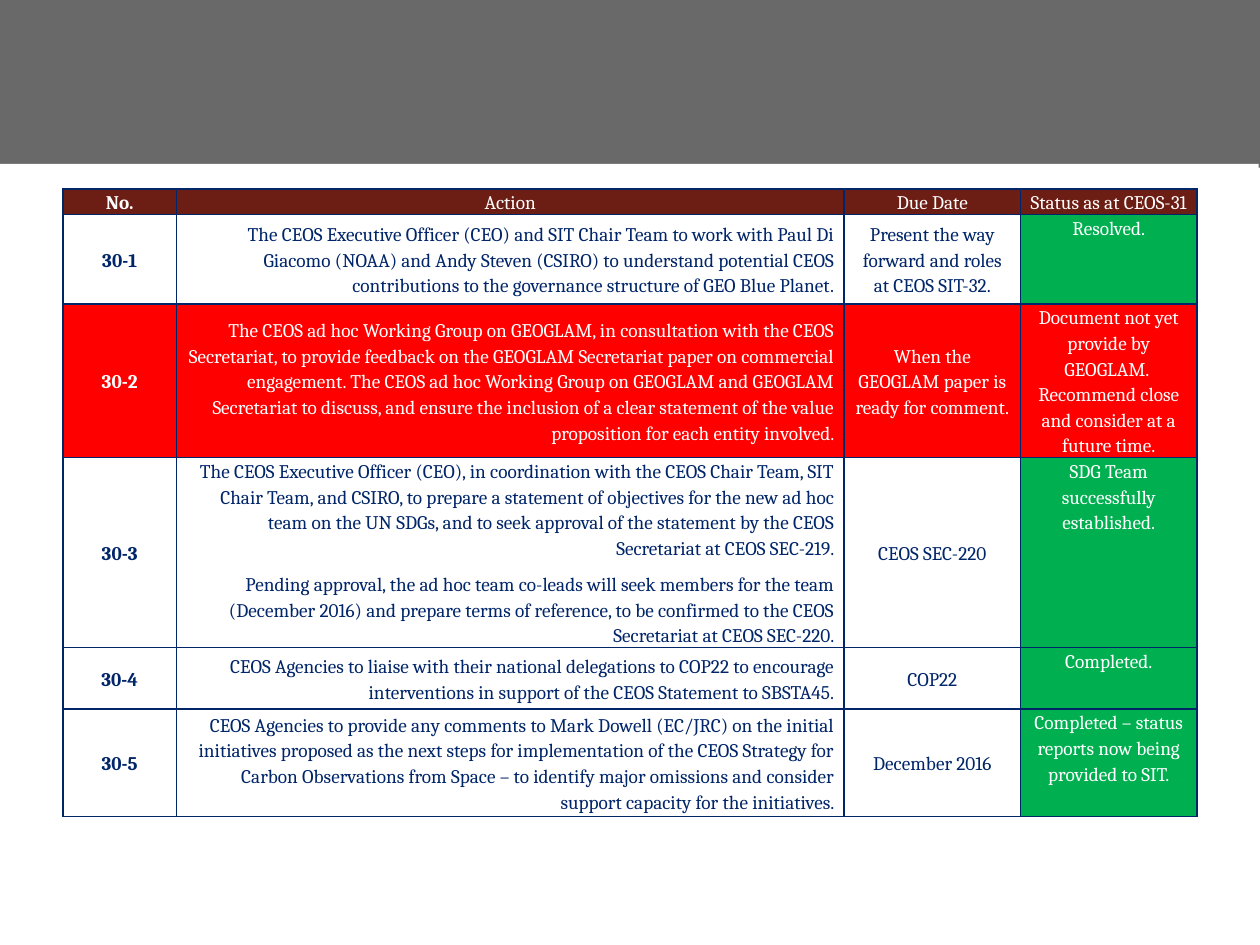
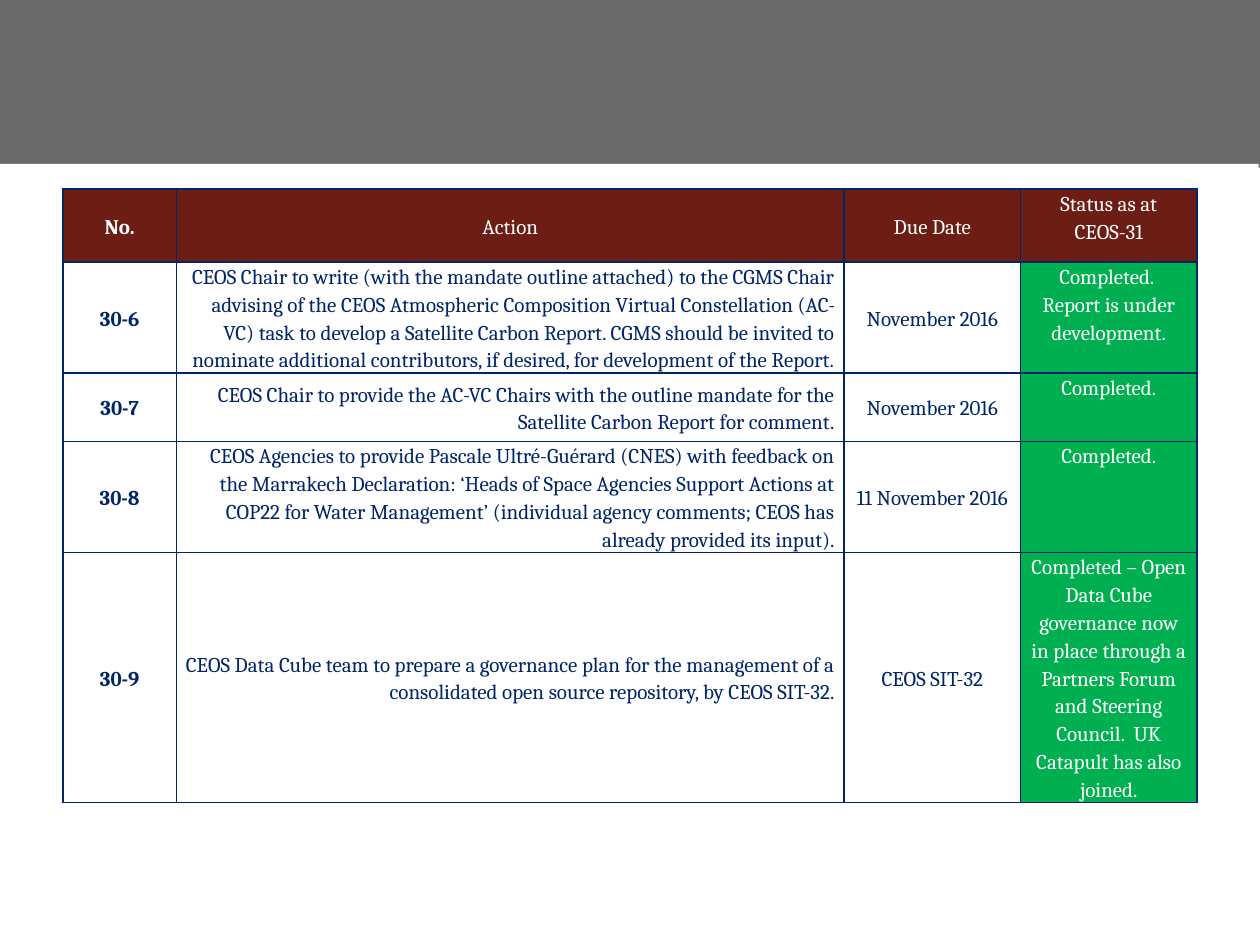
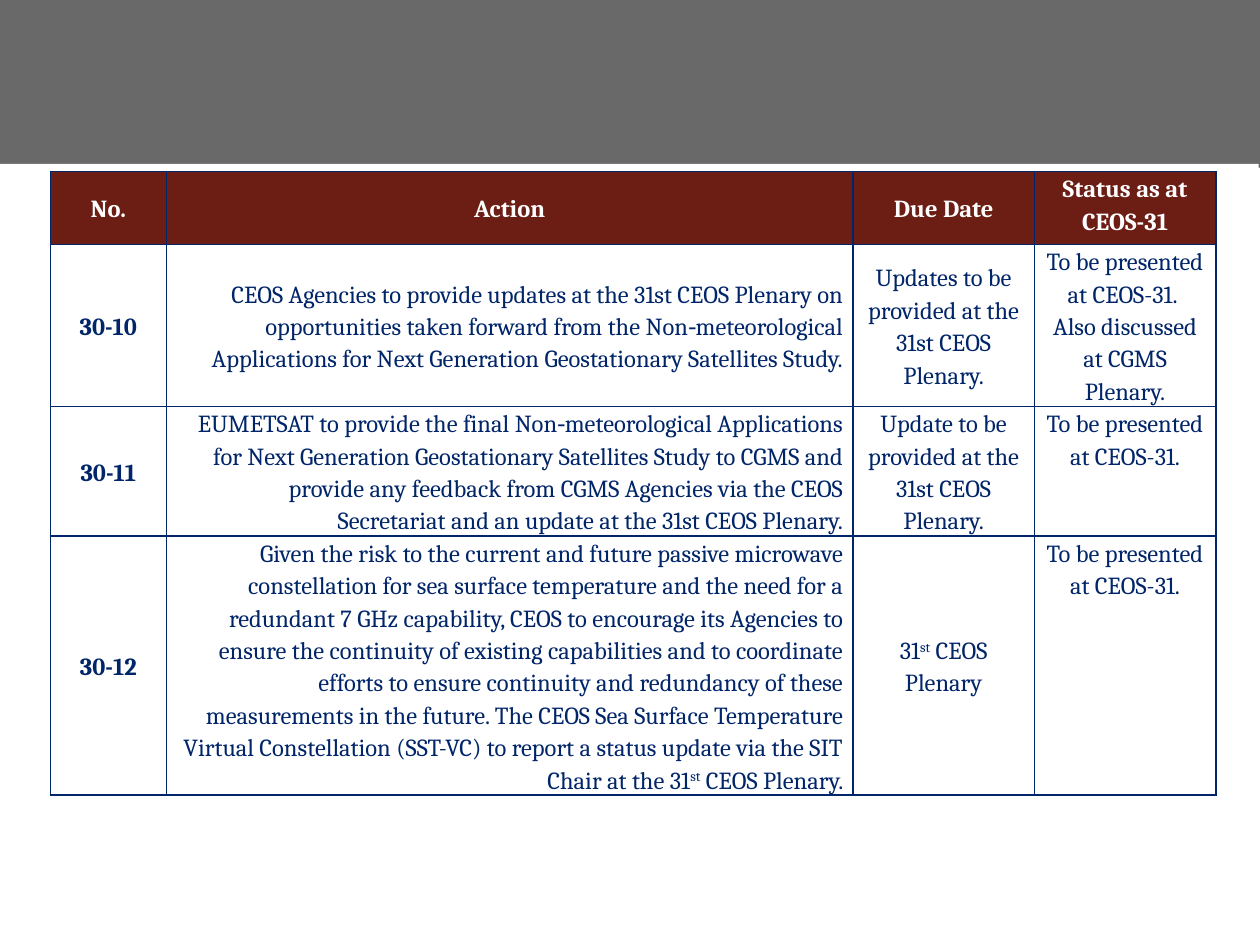
from lxml.etree import SubElement
from pptx import Presentation
from pptx.dml.color import RGBColor
from pptx.enum.shapes import MSO_SHAPE as Kind
from pptx.enum.text import MSO_ANCHOR as Anchor, PP_ALIGN as Align
from pptx.oxml.ns import qn
from pptx.util import Inches, Pt

HUES = {"grey": "696969", "white": "FFFFFF", "navy": "002569",
        "maroon": "6C1E15", "green": "00B050", "red": "FF0000"}
FACE = "Cambria"
PANELS = [(-0.01, 1.3, 10, 6.2), (0, 1.33, 10, 6.17)]
HEADS = ("No.", "Action", "Due Date", "Status as at CEOS-31")
ALIGNS = (Align.CENTER, Align.RIGHT, Align.CENTER, Align.CENTER)
# Cell insets in points
INSETS = {"margin_left": 5.4, "margin_right": 5.4,
          "margin_top": 0, "margin_bottom": 0}

# Fill of the first three cells, then fill of the status cell
STATES = {"head": ("maroon", "maroon"), "done": (None, "green"),
          "stuck": ("red", "red"), "open": (None, None)}

# Each row: state, height, number, action, due date, status.
# A line break starts a paragraph; ^ marks bound raised text.
SLIDES = [
    {"at": (0.5, 1.5, 9, 5.45), "cols": (0.9, 5.3, 1.4, 1.4),
     "size": 11, "bold": False, "top": 0.19, "rows": [
        ("done", 0.71, "30-1",
         "The CEOS Executive Officer (CEO) and SIT Chair Team to work with "
         "Paul Di Giacomo (NOAA) and Andy Steven (CSIRO) to understand "
         "potential CEOS contributions to the governance structure of GEO "
         "Blue Planet.",
         "Present the way forward and roles at CEOS SIT-32.",
         "Resolved."),
        ("stuck", 1.15, "30-2",
         "The CEOS ad hoc Working Group on GEOGLAM, in consultation with the "
         "CEOS Secretariat, to provide feedback on the GEOGLAM Secretariat "
         "paper on commercial engagement. The CEOS ad hoc Working Group on "
         "GEOGLAM and GEOGLAM Secretariat to discuss, and ensure the "
         "inclusion of a clear statement of the value proposition for each "
         "entity involved.",
         "When the GEOGLAM paper is ready for comment.",
         "Document not yet provide by GEOGLAM.  Recommend close and consider "
         "at a future time."),
        ("done", 1.35, "30-3",
         "The CEOS Executive Officer (CEO), in coordination with the CEOS "
         "Chair Team, SIT Chair Team, and CSIRO, to prepare a statement of "
         "objectives for the new ad hoc team on the UN SDGs, and to seek "
         "approval of the statement by the CEOS Secretariat at CEOS "
         "SEC-219.\n"
         "Pending approval, the ad hoc team co-leads will seek members for "
         "the team (December 2016) and prepare terms of reference, to be "
         "confirmed to the CEOS Secretariat at CEOS SEC-220.",
         "CEOS SEC-220",
         "SDG Team successfully established."),
        ("done", 0.49, "30-4",
         "CEOS Agencies to liaise with their national delegations to COP22 "
         "to encourage interventions in support of the CEOS Statement to "
         "SBSTA45.",
         "COP22",
         "Completed."),
        ("done", 0.85, "30-5",
         "CEOS Agencies to provide any comments to Mark Dowell (EC/JRC) on "
         "the initial initiatives proposed as the next steps for "
         "implementation of the CEOS Strategy for Carbon Observations from "
         "Space – to identify major omissions and consider support capacity "
         "for the initiatives.",
         "December 2016",
         "Completed – status reports now being provided to SIT."),
     ]},
    {"at": (0.5, 1.5, 9, 5.43), "cols": (0.9, 5.3, 1.4, 1.4),
     "size": 12, "bold": False, "top": 0.58, "rows": [
        ("done", 0.86, "30-6",
         "CEOS Chair to write (with the mandate outline attached) to the "
         "CGMS Chair advising of the CEOS Atmospheric Composition Virtual "
         "Constellation (AC-VC) task to develop a Satellite Carbon Report. "
         "CGMS should be invited to nominate additional contributors, if "
         "desired, for development of the Report.",
         "November 2016",
         "Completed.  Report is under development."),
        ("done", 0.54, "30-7",
         "CEOS Chair to provide the AC-VC Chairs with the outline mandate "
         "for the Satellite Carbon Report for comment.",
         "November 2016",
         "Completed."),
        ("done", 0.81, "30-8",
         "CEOS Agencies to provide Pascale Ultré-Guérard (CNES) with "
         "feedback on the Marrakech Declaration: ‘Heads of Space Agencies "
         "Support Actions at COP22 for Water Management’ (individual agency "
         "comments; CEOS has already provided its input).",
         "11 November 2016",
         "Completed."),
        ("done", 1.53, "30-9",
         "CEOS Data Cube team to prepare a governance plan for the "
         "management of a consolidated open source repository, by CEOS "
         "SIT-32.",
         "CEOS SIT-32",
         "Completed – Open Data Cube governance now in place through a "
         "Partners Forum and Steering Council.  UK Catapult has also "
         "joined."),
     ]},
    {"at": (0.4, 1.36, 9.25, 5.95), "cols": (0.92, 5.45, 1.44, 1.44),
     "size": 14, "bold": True, "top": 0.58, "rows": [
        ("open", 0.77, "30-10",
         "CEOS Agencies to provide updates at the 31st CEOS Plenary on "
         "opportunities taken forward from the Non‐meteorological "
         "Applications for Next Generation Geostationary Satellites Study.",
         "Updates to be provided at the 31st CEOS Plenary.",
         "To be presented at CEOS-31.  Also discussed at CGMS Plenary."),
        ("open", 0.87, "30-11",
         "EUMETSAT to provide the final Non‐meteorological Applications for "
         "Next Generation Geostationary Satellites Study to CGMS and provide "
         "any feedback from CGMS Agencies via the CEOS Secretariat and an "
         "update at the 31st CEOS Plenary.",
         "Update to be provided at the 31st CEOS Plenary.",
         "To be presented at CEOS-31."),
        ("open", 1.37, "30-12",
         "Given the risk to the current and future passive microwave "
         "constellation for sea surface temperature and the need for a "
         "redundant 7 GHz capability, CEOS to encourage its Agencies to "
         "ensure the continuity of existing capabilities and to coordinate "
         "efforts to ensure continuity and redundancy of these measurements "
         "in the future. The CEOS Sea Surface Temperature Virtual "
         "Constellation (SST-VC) to report a status update via the SIT Chair "
         "at the 31^st^ CEOS Plenary.",
         "31^st^ CEOS Plenary",
         "To be presented at CEOS-31."),
     ]},
]


def rgb(hue):
    return RGBColor.from_string(HUES[hue])


def paint(fill, hue):
    fill.solid()
    fill.fore_color.rgb = rgb(hue)


def add_panels(slide):
    for box in PANELS:
        panel = slide.shapes.add_shape(Kind.RECTANGLE, *map(Inches, box))
        panel.shadow.inherit = False
        paint(panel.fill, "white")
        panel.line.fill.background()


def add_edges(cell):
    props = cell._tc.get_or_add_tcPr()
    for side in "LRTB":
        line = SubElement(props, qn(f"a:ln{side}"), w=str(Pt(1)))
        fill = SubElement(line, qn("a:solidFill"))
        SubElement(fill, qn("a:srgbClr"), val=HUES["navy"])


def write(cell, text, align, ink, look):
    frame = cell.text_frame
    for i, part in enumerate(text.split("\n")):
        para = frame.add_paragraph() if i else frame.paragraphs[0]
        para.alignment = align
        para.line_spacing = 1.15
        para.space_before = Pt(6 if i else 0)
        for j, piece in enumerate(part.split("^")):
            run = para.add_run()
            run.text = piece
            for key, value in look.items():
                setattr(run.font, key, value)
            run.font.color.rgb = rgb(ink)
            if j % 2:
                run._r.get_or_add_rPr().set("baseline", "30000")


def add_log(slide, log):
    rows = [("head", log["top"], *HEADS)] + log["rows"]
    frame = slide.shapes.add_table(len(rows), len(HEADS),
                                   *map(Inches, log["at"]))
    table = frame.table
    table.first_row = table.horz_banding = False
    for col, width in zip(table.columns, log["cols"]):
        col.width = Inches(width)
    for r, (state, height, *texts) in enumerate(rows):
        table.rows[r].height = Inches(height)
        main, last = STATES[state]
        head = state == "head"
        for c, text in enumerate(texts):
            cell = table.cell(r, c)
            status = c == len(HEADS) - 1
            for side, inset in INSETS.items():
                setattr(cell, side, Pt(inset))
            cell.vertical_anchor = Anchor.TOP if status else Anchor.MIDDLE
            add_edges(cell)
            hue = last if status else main
            if hue:
                paint(cell.fill, hue)
            else:
                cell.fill.background()
            write(cell, text, Align.CENTER if head else ALIGNS[c],
                  "white" if hue else "navy",
                  {"name": FACE, "size": Pt(log["size"]),
                   "bold": c == 0 or (head and log["bold"])})
    frame.height = Inches(log["at"][3])


def main():
    deck = Presentation()
    deck.slide_width, deck.slide_height = Inches(10), Inches(7.5)
    paint(deck.slide_master.background.fill, "grey")
    for log in SLIDES:
        slide = deck.slides.add_slide(deck.slide_layouts[6])
        add_panels(slide)
        add_log(slide, log)
    deck.save("out.pptx")


if __name__ == "__main__":
    main()
